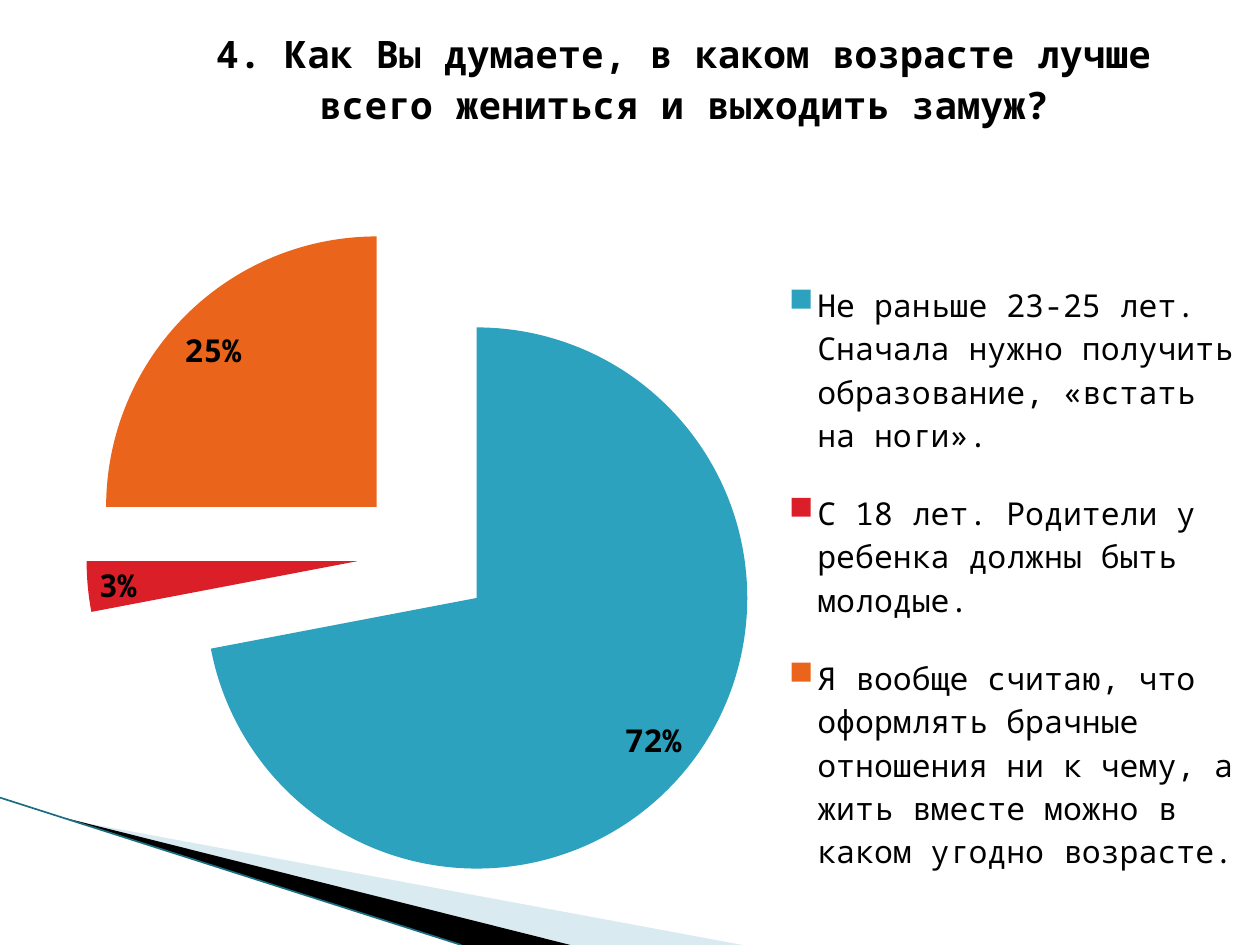
import pptx
import pptx.chart.data
import pptx.dml.color
import pptx.enum.chart
import pptx.enum.shapes
import pptx.enum.text
import pptx.oxml
import pptx.oxml.ns
import pptx.util

Cm = pptx.util.Cm
Pt = pptx.util.Pt
RGB = pptx.dml.color.RGBColor
qn = pptx.oxml.ns.qn

BLACK = RGB(0x00, 0x00, 0x00)
PALE = RGB(0xA0, 0xCB, 0xDC)
TEAL = RGB(0x1B, 0x6E, 0x82)
SLICES = [RGB(0x2D, 0xA2, 0xBF), RGB(0xDA, 0x1F, 0x28), RGB(0xEB, 0x64, 0x1B)]
FACE = "Noto Sans Mono"
TITLE = "4. Как Вы думаете, в каком возрасте лучше всего жениться и выходить замуж?"
DATA = {
    "Не раньше 23-25 лет. Сначала нужно получить образование, «встать на ноги».": 0.72,
    "С 18 лет. Родители у ребенка должны быть молодые.": 0.03,
    "Я вообще считаю, что оформлять брачные отношения ни к чему, "
    "а жить вместе можно в каком угодно возрасте.": 0.25,
}


def make(tag, **attrs):
    node = pptx.oxml.parse_xml(
        f'<{tag} xmlns:c="http://schemas.openxmlformats.org/drawingml/2006/chart" '
        'xmlns:a="http://schemas.openxmlformats.org/drawingml/2006/main"/>')
    for key, val in attrs.items():
        node.set(key, str(val))
    return node


def set_font(font, size=18, bold=False, color=BLACK):
    font.name = FACE
    font.size = Pt(size)
    font.bold = bold
    font.color.rgb = color


def add_text(frame, words, align=pptx.enum.text.PP_ALIGN.CENTER, **style):
    par = frame.paragraphs[0]
    par.alignment = align
    run = par.add_run()
    run.text = words
    set_font(run.font, **style)


def place(node, index, **parts):
    for old in node.findall(qn("c:layout")):
        node.remove(old)
    layout = make("c:layout")
    manual = make("c:manualLayout")
    layout.append(manual)
    if "w" in parts and index == 0:
        manual.append(make("c:layoutTarget", val="inner"))
    for axis in "xy":
        manual.append(make(f"c:{axis}Mode", val="edge"))
    for key, val in parts.items():
        manual.append(make(f"c:{key}", val=val))
    node.insert(index, layout)


def add_wedge(slide, points, color, alpha=None):
    spots = [(Cm(x), Cm(y)) for x, y in points]
    path = slide.shapes.build_freeform(*spots[0])
    path.add_line_segments(spots[1:], close=True)
    shape = path.convert_to_shape()
    shape.shadow.inherit = False
    shape.fill.solid()
    shape.fill.fore_color.rgb = color
    shape.line.fill.background()
    if alpha:
        tint = shape._element.spPr.find(".//" + qn("a:srgbClr"))
        tint.append(make("a:alpha", val=alpha * 1000))


def add_line(slide, start, end, color, width):
    line = slide.shapes.add_connector(
        pptx.enum.shapes.MSO_CONNECTOR.STRAIGHT, *map(Cm, start + end))
    line.line.color.rgb = color
    line.line.width = Pt(width)
    line._element.spPr.append(make("a:effectLst"))


def add_pie(slide):
    data = pptx.chart.data.CategoryChartData(number_format="0%")
    data.categories = list(DATA)
    data.add_series(TITLE, list(DATA.values()))
    chart = slide.shapes.add_chart(
        pptx.enum.chart.XL_CHART_TYPE.PIE,
        Cm(0.5), Cm(0.33), Cm(24.8), Cm(18.72), data).chart
    set_font(chart.font)

    chart.has_title = True
    add_text(chart.chart_title.text_frame, TITLE, size=21.6, bold=True)
    place(chart.chart_title._element, 1, x=0.15, y=0)

    chart.has_legend = True
    legend = chart.legend
    legend.position = pptx.enum.chart.XL_LEGEND_POSITION.RIGHT
    legend.include_in_layout = False
    set_font(legend.font)
    place(legend._element, 1, x=0.64, y=0.25, w=0.36, h=0.71)

    plot = chart.plots[0]
    plot.vary_by_categories = True
    place(plot._element.getparent(), 0, x=0.05, y=0.21, w=0.55, h=0.74)
    row = plot.series[0]
    for i, color in enumerate(SLICES):
        fill = row.points[i].format.fill
        fill.solid()
        fill.fore_color.rgb = color
    row._element.find(qn("c:dPt")).addprevious(make("c:explosion", val=25))

    plot.has_data_labels = True
    labels = plot.data_labels
    labels.show_value = True
    labels.number_format = "0%"
    labels.number_format_is_linked = False
    labels.position = pptx.enum.chart.XL_LABEL_POSITION.BEST_FIT
    set_font(labels.font, bold=True)


def main():
    deck = pptx.Presentation()
    deck.slide_width = Cm(25.4)
    deck.slide_height = Cm(19.05)
    slide = deck.slides.add_slide(deck.slide_layouts[6])
    add_wedge(slide, [(1.4, 16.53), (14.97, 19.05), (11.5, 19.05)], PALE, alpha=40)
    add_wedge(slide, [(1.35, 16.5), (11.5, 19.05), (9.3, 19.05)], BLACK)
    add_line(slide, (0, 16.08), (9.3, 19.05), TEAL, 0.95)
    add_pie(slide)
    deck.save("out.pptx")


if __name__ == "__main__":
    main()
